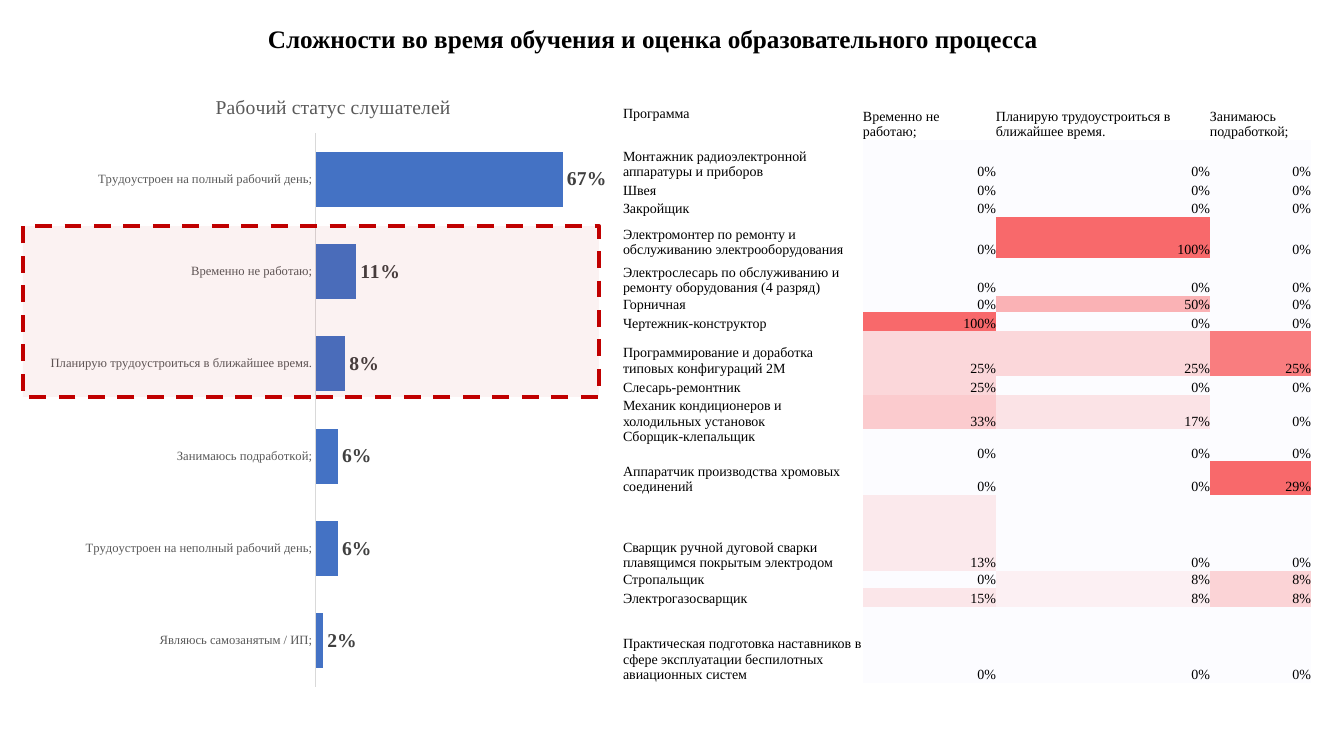
import pptx
import pptx.chart.data
import pptx.dml.color
import pptx.enum.chart
import pptx.enum.dml
import pptx.enum.shapes
import pptx.enum.text
import pptx.util
from lxml import etree

SERIF = "Times New Roman"
CHART_NS = "http://schemas.openxmlformats.org/drawingml/2006/chart"
DRAWING_NS = "http://schemas.openxmlformats.org/drawingml/2006/main"


def px(length):
    return pptx.util.Emu(round(length * 914400 / 100.8))


def style_font(font, size, color, bold=False):
    font.name = SERIF
    font.size = pptx.util.Pt(size)
    font.bold = bold
    font.color.rgb = rgb(color)


rgb = pptx.dml.color.RGBColor.from_string

presentation = pptx.Presentation()
presentation.slide_width = px(1344)
presentation.slide_height = px(756)
slide = presentation.slides.add_slide(presentation.slide_layouts[6])

# Slide title
title_box = slide.shapes.add_textbox(px(258), px(2), px(845), px(76))
title_box.text_frame.word_wrap = True
title_box.text_frame.vertical_anchor = pptx.enum.text.MSO_ANCHOR.MIDDLE
paragraph = title_box.text_frame.paragraphs[0]
paragraph.line_spacing = 0.9
paragraph.space_after = pptx.util.Pt(6)
run = paragraph.add_run()
run.text = "Сложности во время обучения и оценка образовательного процесса"
style_font(run.font, 18, "000000", bold=True)

# Work status chart
statuses = {
    "Являюсь самозанятым / ИП;": 0.02,
    "Трудоустроен на неполный рабочий день;": 0.06,
    "Занимаюсь подработкой;": 0.06,
    "Планирую трудоустроиться в ближайшее время.": 0.08,
    "Временно не работаю;": 0.11,
    "Трудоустроен на полный рабочий день;": 0.67,
}
chart_data = pptx.chart.data.CategoryChartData(number_format="0%")
chart_data.categories = list(statuses)
chart_data.add_series("Рабочий статус", list(statuses.values()))
chart_width, chart_height = 584, 632
chart = slide.shapes.add_chart(
    pptx.enum.chart.XL_CHART_TYPE.BAR_CLUSTERED,
    px(38), px(69), px(chart_width), px(chart_height), chart_data).chart
chart.has_legend = False
style_font(chart.font, 10, "000000")
chart.has_title = True
run = chart.chart_title.text_frame.paragraphs[0].add_run()
run.text = "Рабочий статус слушателей"
style_font(run.font, 14, "595959")

category_axis = chart.category_axis
category_axis.major_tick_mark = pptx.enum.chart.XL_TICK_MARK.NONE
style_font(category_axis.tick_labels.font, 9, "595959")
category_axis.format.line.color.rgb = rgb("D9D9D9")
category_axis.format.line.width = pptx.util.Pt(0.75)
value_axis = chart.value_axis
value_axis.minimum_scale = 0
value_axis.maximum_scale = 0.8
value_axis.has_major_gridlines = False
value_axis.visible = False

plot = chart.plots[0]
plot.gap_width = 68
plot.vary_by_categories = False
series = plot.series[0]
series.format.fill.solid()
series.format.fill.fore_color.rgb = rgb("4472C4")
labels = series.data_labels
labels.show_value = True
labels.number_format = "0%"
labels.number_format_is_linked = False
labels.position = pptx.enum.chart.XL_LABEL_POSITION.OUTSIDE_END
style_font(labels.font, 14, "404040", bold=True)

# Fixed places of the chart title and the bars, as shares of the chart
chart_title = chart.chart_title._element
plot_area = plot._element.getparent()
for part, position, places in (
        (chart_title, 1, {"x": 174 / chart_width, "y": 22 / chart_height}),
        (plot_area, 0, {"x": 278 / chart_width, "y": 64 / chart_height,
                        "w": 295 / chart_width, "h": 554 / chart_height})):
    for old_layout in part.findall(f"{{{CHART_NS}}}layout"):
        part.remove(old_layout)
    layout = etree.Element(f"{{{CHART_NS}}}layout")
    manual = etree.SubElement(layout, f"{{{CHART_NS}}}manualLayout")
    if part is plot_area:
        etree.SubElement(manual, f"{{{CHART_NS}}}layoutTarget", val="inner")
    for side in ("x", "y"):
        etree.SubElement(manual, f"{{{CHART_NS}}}{side}Mode", val="edge")
    for side, share in places.items():
        etree.SubElement(manual, f"{{{CHART_NS}}}{side}", val=f"{share:.4f}")
    part.insert(position, layout)

# Programme table: row height, programme, percentages
headers = ["Программа", "Временно не работаю;",
           "Планирую трудоустроиться в ближайшее время.", "Занимаюсь подработкой;"]
programmes = [
    (40, "Монтажник радиоэлектронной аппаратуры и приборов", 0, 0, 0),
    (19, "Швея", 0, 0, 0),
    (18, "Закройщик", 0, 0, 0),
    (41, "Электромонтер по ремонту и обслуживанию электрооборудования", 0, 100, 0),
    (38, "Электрослесарь по обслуживанию и ремонту оборудования (4 разряд)", 0, 0, 0),
    (16, "Горничная", 0, 50, 0),
    (19, "Чертежник-конструктор", 100, 0, 0),
    (45, "Программирование и доработка типовых конфигураций 2М", 25, 25, 25),
    (19, "Слесарь-ремонтник", 25, 0, 0),
    (34, "Механик кондиционеров и холодильных установок", 33, 17, 0),
    (32, "Сборщик-клепальщик", 0, 0, 0),
    (31, "Аппаратчик производства хромовых соединений", 0, 0, 29),
    (76, "Сварщик ручной дуговой сварки плавящимся покрытым электродом", 13, 0, 0),
    (16, "Стропальщик", 0, 8, 8),
    (19, "Электрогазосварщик", 15, 8, 8),
    (76, "Практическая подготовка наставников в сфере эксплуатации "
         "беспилотных авиационных систем", 0, 0, 0),
]
column_widths = [240, 133, 214, 101]
rows = [(32, *headers), *programmes]
table_frame = slide.shapes.add_table(
    len(rows), len(headers), px(623), px(106),
    px(sum(column_widths)), px(sum(row[0] for row in rows)))
table = table_frame.table
table.first_row = False
table.horz_banding = False
style_id = table._tbl.tblPr.find(f"{{{DRAWING_NS}}}tableStyleId")
style_id.text = "{2D5ABB26-0587-4C30-8999-92F81FD0307C}"
for column, width in zip(table.columns, column_widths):
    column.width = px(width)

# Each column is shaded from its lowest to its highest value
low_color, high_color = rgb("FCFCFF"), rgb("F8696B")
column_peaks = [max(row[column] for row in programmes) for column in (2, 3, 4)]
top_anchored = ("Программа", "Сборщик-клепальщик")
for row_index, (height, *contents) in enumerate(rows):
    table.rows[row_index].height = px(height)
    for column_index, content in enumerate(contents):
        cell = table.cell(row_index, column_index)
        cell.margin_left = cell.margin_right = cell.margin_top = cell.margin_bottom = 0
        cell.vertical_anchor = (pptx.enum.text.MSO_ANCHOR.TOP if content in top_anchored
                                else pptx.enum.text.MSO_ANCHOR.BOTTOM)
        paragraph = cell.text_frame.paragraphs[0]
        run = paragraph.add_run()
        style_font(run.font, 10, "000000")
        cell.fill.solid()
        if isinstance(content, str):
            run.text = content
            cell.fill.fore_color.rgb = rgb("FFFFFF")
        else:
            run.text = f"{content}%"
            paragraph.alignment = pptx.enum.text.PP_ALIGN.RIGHT
            share = content / column_peaks[column_index - 1]
            cell.fill.fore_color.rgb = pptx.dml.color.RGBColor(
                *(round(low + (high - low) * share)
                  for low, high in zip(low_color, high_color)))

# Dashed highlight over the two groups without work
highlight = slide.shapes.add_shape(
    pptx.enum.shapes.MSO_SHAPE.RECTANGLE, px(23), px(226), px(576), px(171))
highlight.shadow.inherit = False
highlight.fill.solid()
highlight.fill.fore_color.rgb = rgb("C00000")
fill_color = highlight._element.spPr.find(f".//{{{DRAWING_NS}}}srgbClr")
etree.SubElement(fill_color, f"{{{DRAWING_NS}}}alpha", val="5000")
highlight.line.color.rgb = rgb("C00000")
highlight.line.width = pptx.util.Pt(3)
highlight.line.dash_style = pptx.enum.dml.MSO_LINE.DASH

presentation.save("out.pptx")
